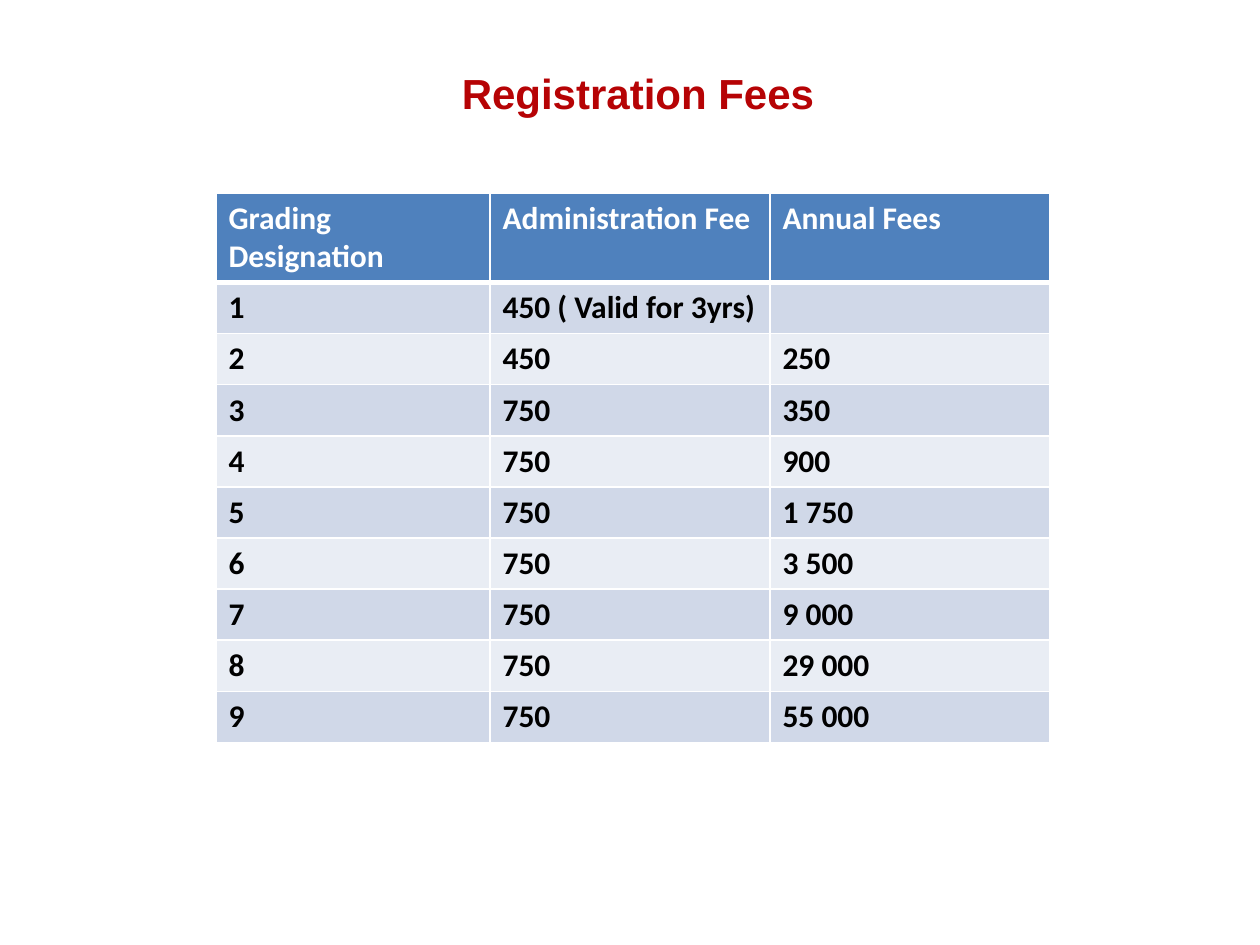
from dataclasses import dataclass

from lxml.etree import SubElement
from pptx import Presentation
from pptx.dml.color import RGBColor as RGB
from pptx.enum.text import MSO_ANCHOR as Anchor, PP_ALIGN as Align
from pptx.oxml.ns import qn
from pptx.util import Pt

EMU_PER_PX = 914400 / 126


@dataclass(frozen=True)
class Theme:
    title_font: str = "Arial"
    table_font: str = "Calibri"
    title_size: int = 24
    table_size: int = 18
    title: str = "B60305"
    header_fill: str = "4F81BD"
    header_text: str = "FFFFFF"
    body_text: str = "000000"
    bands: tuple = ("D0D8E8", "E9EDF4")
    border: str = "FFFFFF"
    thin: int = 1
    thick: int = 3


THEME = Theme()

FEES = [
    ("Grading Designation", "Administration Fee", "Annual Fees"),
    ("1", "450 ( Valid for 3yrs)", ""),
    ("2", "450", "250"),
    ("3", "750", "350"),
    ("4", "750", "900"),
    ("5", "750", "1 750"),
    ("6", "750", "3 500"),
    ("7", "750", "9 000"),
    ("8", "750", "29 000"),
    ("9", "750", "55 000"),
]


def px(length):
    return round(length * EMU_PER_PX)


def format_text(paragraph, font_name, size, color):
    for run in paragraph.runs:
        font = run.font
        font.name, font.size, font.bold = font_name, Pt(size), True
        font.color.rgb = RGB.from_string(color)


def set_borders(cell, top, bottom):
    """Draw the four cell borders, with widths in points."""
    properties = cell._tc.get_or_add_tcPr()
    widths = {"lnL": THEME.thin, "lnR": THEME.thin, "lnT": top, "lnB": bottom}
    for side, width in widths.items():
        line = SubElement(properties, qn(f"a:{side}"), w=str(Pt(width)))
        fill = SubElement(line, qn("a:solidFill"))
        SubElement(fill, qn("a:srgbClr"), val=THEME.border)


def add_title(slide, left, top, width, height):
    title = slide.shapes.title
    title.left, title.top = px(left), px(top)
    title.width, title.height = px(width), px(height)
    frame = title.text_frame
    frame.text = "Registration Fees"
    frame.vertical_anchor = Anchor.MIDDLE
    heading = frame.paragraphs[0]
    heading.alignment = Align.CENTER
    format_text(heading, THEME.title_font, THEME.title_size, THEME.title)


def add_fee_table(slide, left, top, column_widths, header_height, row_height):
    height = header_height + row_height * (len(FEES) - 1)
    fee_table = slide.shapes.add_table(
        len(FEES), len(column_widths),
        px(left), px(top), px(sum(column_widths)), px(height)).table
    for column, width in zip(fee_table.columns, column_widths):
        column.width = px(width)

    for grade, values in enumerate(FEES):
        is_header = grade == 0
        fee_table.rows[grade].height = px(header_height if is_header else row_height)
        fill = THEME.header_fill if is_header else THEME.bands[(grade - 1) % 2]
        color = THEME.header_text if is_header else THEME.body_text
        # The rule below the header is shared with the first grade
        top_border = THEME.thick if grade == 1 else THEME.thin
        bottom_border = THEME.thick if is_header else THEME.thin
        for index, value in enumerate(values):
            cell = fee_table.cell(grade, index)
            cell.text_frame.text = value
            format_text(cell.text_frame.paragraphs[0],
                        THEME.table_font, THEME.table_size, color)
            set_borders(cell, top_border, bottom_border)
            cell.fill.solid()
            cell.fill.fore_color.rgb = RGB.from_string(fill)


def main():
    deck = Presentation()
    deck.slide_width, deck.slide_height = px(1260), px(945)
    slide = deck.slides.add_slide(deck.slide_layouts[5])

    # Heading
    add_title(slide, 79, 59, 1118, 68)
    # Fees by grading designation
    add_fee_table(slide, 216, 193, (274, 280, 280), header_height=89, row_height=51)

    deck.save("out.pptx")


if __name__ == "__main__":
    main()
